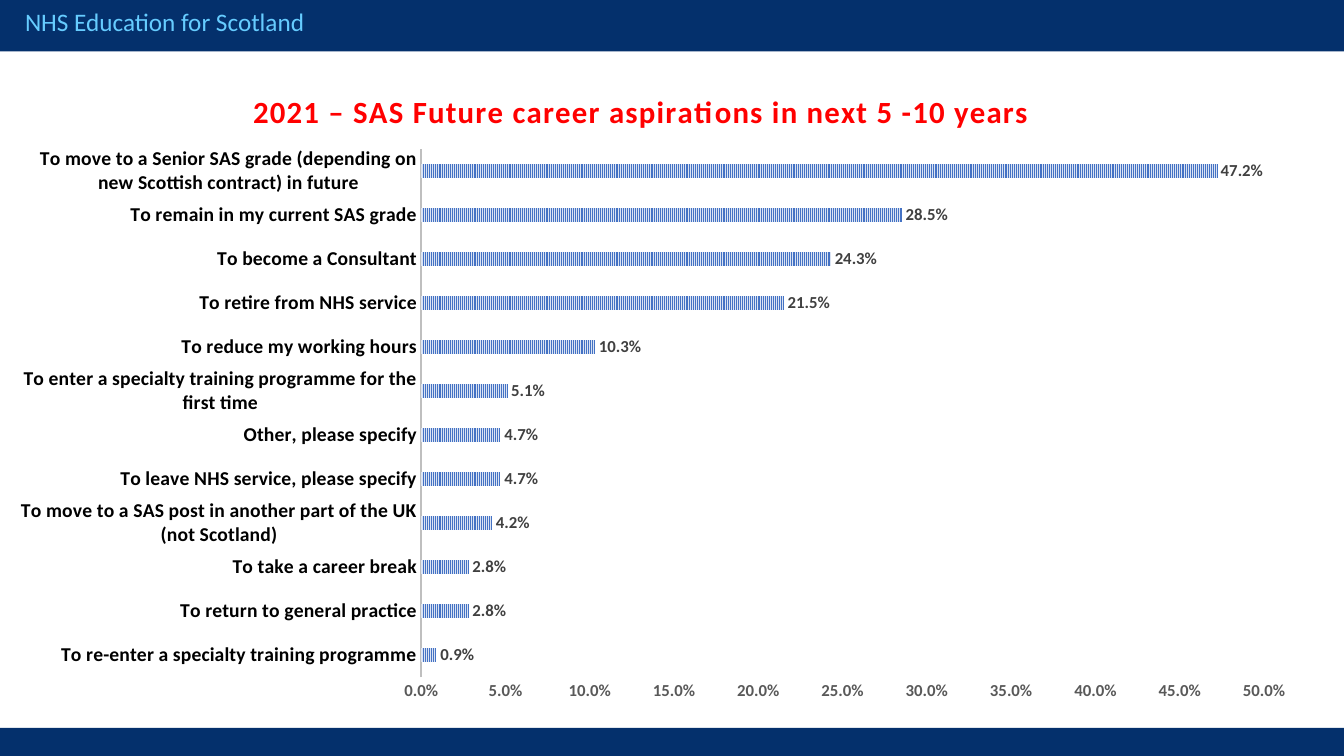
from dataclasses import dataclass

from lxml.etree import SubElement
from pptx import Presentation
from pptx.chart.data import CategoryChartData
from pptx.dml.color import RGBColor
from pptx.enum.chart import XL_CHART_TYPE as ChartType
from pptx.enum.chart import XL_LABEL_POSITION as LabelPos
from pptx.enum.chart import XL_TICK_MARK as Tick
from pptx.enum.dml import MSO_PATTERN as Pattern
from pptx.enum.shapes import MSO_SHAPE as Shape
from pptx.oxml.ns import qn
from pptx.util import Inches, Pt

FONT = "Calibri"
COLORS = {
    "navy": "04306C", "sky": "66CCFF", "red": "FF0000", "black": "000000",
    "axis": "BFBFBF", "scale": "595959", "label": "404040",
    "bar": "4472C4", "bar_back": "DAE3F3",
}


@dataclass
class Band:
    top: float
    height: float


@dataclass
class Aspiration:
    name: str
    share: float


BANDS = [Band(0, 0.51), Band(7.22, 0.28)]
ASPIRATIONS = [
    Aspiration("To re-enter a specialty training programme", 0.009),
    Aspiration("To return to general practice", 0.028),
    Aspiration("To take a career break", 0.028),
    Aspiration("To move to a SAS post in another part of the UK (not Scotland)", 0.042),
    Aspiration("To leave NHS service, please specify", 0.047),
    Aspiration("Other, please specify", 0.047),
    Aspiration("To enter a specialty training programme for the first time", 0.051),
    Aspiration("To reduce my working hours", 0.103),
    Aspiration("To retire from NHS service", 0.215),
    Aspiration("To become a Consultant", 0.243),
    Aspiration("To remain in my current SAS grade", 0.285),
    Aspiration("To move to a Senior SAS grade (depending on new Scottish contract) in future", 0.472),
]


def rgb(name: str) -> RGBColor:
    return RGBColor.from_string(COLORS[name])


def set_font(font, size: float, color: str, bold: bool = False) -> None:
    font.name, font.size, font.bold = FONT, Pt(size), bold
    font.color.rgb = rgb(color)


def add_band(slide, band: Band) -> None:
    sp = slide.shapes.add_shape(Shape.RECTANGLE, 0, Inches(band.top),
                                Inches(13.33), Inches(band.height))
    sp.shadow.inherit = False
    sp.fill.solid()
    sp.fill.fore_color.rgb = rgb("navy")
    sp.line.fill.background()


def place(part, index: int, **fractions: float) -> None:
    """Fix a chart part at fractions of the chart's size."""
    layout = part.find(qn("c:layout"))
    if layout is None:
        layout = SubElement(part, qn("c:layout"))
        part.insert(index, layout)
    manual = SubElement(layout, qn("c:manualLayout"))
    if "w" in fractions:
        SubElement(manual, qn("c:layoutTarget")).set("val", "inner")
    for key in ("x", "y"):
        SubElement(manual, qn(f"c:{key}Mode")).set("val", "edge")
    for key, value in fractions.items():
        SubElement(manual, qn(f"c:{key}")).set("val", str(value))


def add_title(chart, text: str) -> None:
    title = chart.chart_title
    r = title.text_frame.paragraphs[0].add_run()
    r.text = text
    set_font(r.font, 22, "red", bold=True)
    r._r.get_or_add_rPr().set("spc", "100")
    place(title._element, 1, x=0.18, y=0.04)


def add_aspirations_chart(slide) -> None:
    data = CategoryChartData(number_format="0.0%")
    data.categories = [a.name for a in ASPIRATIONS]
    data.add_series("Series 1", [a.share for a in ASPIRATIONS])
    chart = slide.shapes.add_chart(ChartType.BAR_CLUSTERED, Inches(0.14), Inches(0.58),
                                   Inches(12.86), Inches(6.51), data).chart
    set_font(chart.font, 10, "black")
    chart.has_legend = False
    add_title(chart, "2021 – SAS Future career aspirations in next 5 -10 years")

    # Bars and their labels
    plot = chart.plots[0]
    plot.gap_width, plot.overlap, plot.vary_by_categories = 227, -48, False
    fill = plot.series[0].format.fill
    fill.patterned()
    fill.pattern = Pattern.NARROW_VERTICAL
    fill.fore_color.rgb = rgb("bar")
    fill.back_color.rgb = rgb("bar_back")
    plot.has_data_labels = True
    labels = plot.data_labels
    labels.show_value, labels.position = True, LabelPos.OUTSIDE_END
    labels.number_format, labels.number_format_is_linked = "0.0%", False
    set_font(labels.font, 12, "label", bold=True)

    # Axes
    names, scale = chart.category_axis, chart.value_axis
    for axis in (names, scale):
        axis.major_tick_mark = axis.minor_tick_mark = Tick.NONE
        axis.has_major_gridlines = False
    set_font(names.tick_labels.font, 14, "black", bold=True)
    names.format.line.width = Pt(1.5)
    names.format.line.color.rgb = rgb("axis")
    set_font(scale.tick_labels.font, 12, "scale", bold=True)
    scale.tick_labels.number_format = "0.0%"
    scale.tick_labels.number_format_is_linked = False
    scale.format.line.fill.background()
    scale.minimum_scale, scale.maximum_scale, scale.major_unit = 0, 0.5, 0.05

    # Plot area
    place(chart._chartSpace.chart.plotArea, 0, x=0.314, y=0.138, w=0.65, h=0.805)


def main() -> None:
    prs = Presentation()
    prs.slide_width, prs.slide_height = Inches(13.33), Inches(7.5)
    slide = prs.slides.add_slide(prs.slide_layouts[6])

    # Header and footer bands
    for band in BANDS:
        add_band(slide, band)
    tf = slide.shapes.add_textbox(Inches(0.15), Inches(0.01),
                                  Inches(5.66), Inches(0.4)).text_frame
    tf.word_wrap = True
    p = tf.paragraphs[0]
    p.text = "NHS Education for Scotland"
    set_font(p.font, 18, "sky")

    add_aspirations_chart(slide)
    prs.save("out.pptx")


if __name__ == "__main__":
    main()
